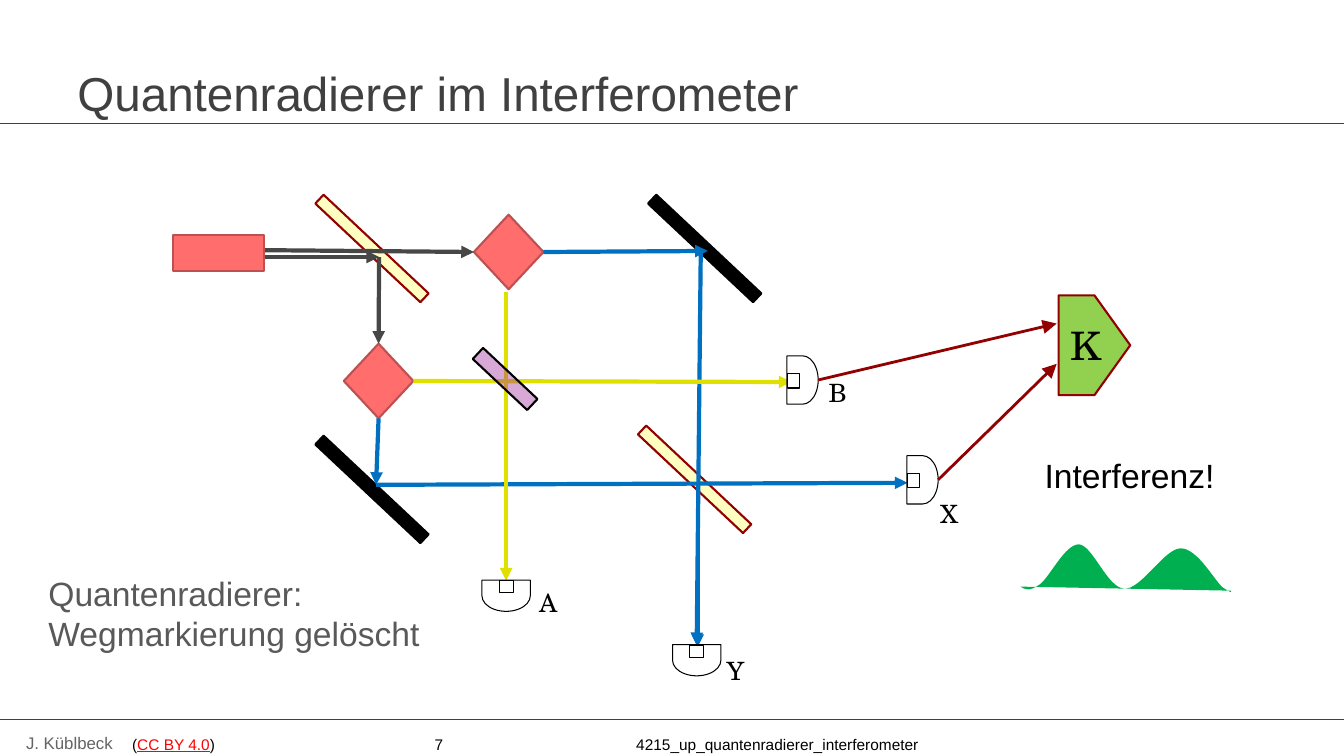
from lxml import etree
from pptx import Presentation
from pptx import util as u
from pptx.dml.color import RGBColor
from pptx.enum import shapes, text
from pptx.oxml.ns import qn

PX = 9144  # 100 px to the inch
KIND = shapes.MSO_SHAPE
MID = text.MSO_ANCHOR.MIDDLE
SANS, SERIF = "Arial", "TeX Gyre Schola"
ROSE, BRICK, CREAM, WINE = "FF6D6D", "BD5151", "FFFFC1", "920000"
BLACK, WHITE, GRAY, BLUE, YELLOW = "000000", "FFFFFF", "474747", "0070C0", "E0E000"
TOP, LEFT, BOTTOM, RIGHT = range(4)
TILT = 313.2


def px(*nums):
    return [u.Emu(round(n * PX)) for n in nums]


def rgb(code):
    return RGBColor.from_string(code)


def style(font, size, color, name=SANS):
    font.size, font.name = u.Pt(size), name
    font.color.rgb = rgb(color)


def write(slide, box, words, size, color=BLACK, name=SANS, pad=(10, 5),
          anchor=None, wrap=True):
    """Place a text box holding one paragraph; pad is its side and top margin."""
    frame = slide.shapes.add_textbox(*px(*box)).text_frame
    side, top = px(*pad)
    frame.margin_left = frame.margin_right = side
    frame.margin_top = frame.margin_bottom = top
    frame.word_wrap = wrap
    frame.vertical_anchor = anchor
    par = frame.paragraphs[0]
    par.text = words
    style(par.font, size, color, name)
    return par


def shape(slide, kind, box, fill, edge, width=1.5, turn=0):
    item = slide.shapes.add_shape(kind, *px(*box))
    item.shadow.inherit = False
    item.fill.solid()
    item.fill.fore_color.rgb = rgb(fill)
    item.line.color.rgb = rgb(edge)
    item.line.width = u.Pt(width)
    item.rotation = turn
    return item


def line(slide, start, end, color, width, head="med"):
    """Draw a straight line; an end is a point or a (shape, side) pair."""
    ends = [(0, 0) if hasattr(e[0], "shape_id") else e for e in (start, end)]
    item = slide.shapes.add_connector(
        shapes.MSO_CONNECTOR.STRAIGHT, *px(*ends[0], *ends[1]))
    if ends[0] is not start:
        item.begin_connect(*start)
    if ends[1] is not end:
        item.end_connect(*end)
    item.line.color.rgb = rgb(color)
    item.line.width = u.Pt(width)
    if head:
        etree.SubElement(item.line._get_or_add_ln(), qn("a:tailEnd"),
                         type="triangle", w=head, len=head)
    etree.SubElement(item._element.spPr, qn("a:effectLst"))


def plate(slide, x, y, fill, edge, wide=12, high=143):
    """Draw a tilted plate centred on (x, y)."""
    return shape(slide, KIND.RECTANGLE, (x - wide / 2, y - high / 2, wide, high),
                 fill, edge, turn=TILT)


def sensor(slide, x, y, label, spot, down=False):
    """Draw a detector centred on (x, y), with its label at spot."""
    turn = 90 if down else 0
    body = shape(slide, KIND.FLOWCHART_DELAY, (x - 15.5, y - 24, 31, 48),
                 WHITE, BLACK, 0.75, turn)
    dx, dy = (0, -9) if down else (-9, 1)
    shape(slide, KIND.RECTANGLE, (x + dx - 6, y + dy - 7, 12, 14),
          WHITE, BLACK, 0.75, turn)
    write(slide, (*spot, 37, 40), label, 18, name=SERIF, wrap=False)
    return body


def wave(slide, x, y):
    """Draw the pattern as smooth curves, three points to each."""
    knots = [(0, 42), (5, 45), (9, 47), (19, 40), (29, 33), (44, 0), (58, 0),
             (72, 1), (86, 43), (103, 44), (120, 45), (143, 4), (159, 4),
             (176, 4), (193, 37), (201, 43), (209, 48), (209, 48), (209, 46)]
    dots = [px(x + dx, y + dy) for dx, dy in knots]
    pen = slide.shapes.build_freeform(*dots[0], scale=1.0)
    pen.add_line_segments(dots[1:], close=True)
    item = pen.convert_to_shape()
    item.shadow.inherit = False
    item.fill.solid()
    item.fill.fore_color.rgb = rgb("00B050")
    item.line.fill.background()
    legs = list(item._element.iter(qn("a:lnTo")))
    for first, *rest in zip(legs[::3], legs[1::3], legs[2::3]):
        first.tag = qn("a:cubicBezTo")
        for leg in rest:
            first.append(leg[0])
            leg.getparent().remove(leg)


def frame(slide, wide):
    """Draw the title, the two rules and the footer."""
    write(slide, (67, 60, 1200, 63), "Quantenradierer im Interferometer", 34,
          "404040", anchor=MID)
    for y in (123, 714):
        line(slide, (0, y), (wide, y), "404040", 0.75, head=None)
    write(slide, (16, 722, 155, 30), "J. Küblbeck", 12, "646464")
    note = write(slide, (131, 729, 1202, 19), "(", 11, pad=(0, 0))
    link = note.add_run()
    link.text = "CC BY 4.0"
    link.font.color.rgb = rgb("FF0000")
    link.font.underline = True
    note.add_run().text = ")\t\t\t\t\t7\t\t\t\t4215_up_quantenradierer_interferometer"


def setup(slide):
    """Draw the interferometer with its beams and detectors."""
    for x, y, fill, edge in ((369, 246.5, CREAM, WINE), (699, 246.5, BLACK, BLACK),
                             (689, 475.5, CREAM, WINE), (369, 485.5, BLACK, BLACK)):
        plate(slide, x, y, fill, edge)
    upper, lower = (shape(slide, KIND.DIAMOND, (x, y, 69, 74), ROSE, BRICK)
                    for x, y in ((470, 213), (341, 341)))
    beams = [
        (GRAY, (241, 248), (upper, LEFT)),
        (BLUE, (373, 481), (900, 479)),
        (BLUE, (695, 251), (691, 640)),
        (GRAY, (376, 255), (lower, TOP)),
        (GRAY, (261, 255), (376, 255)),
        (BLUE, (692, 481), (692, 642)),
        (BLUE, (upper, RIGHT), (702, 249)),
        (BLUE, (lower, BOTTOM), (373, 481)),
        (YELLOW, (502, 290), (502, 576)),
        (YELLOW, (lower, RIGHT), (785, 379)),
    ]
    for color, start, end in beams:
        line(slide, start, end, color, 3)
    shape(slide, KIND.RECTANGLE, (172, 233, 90, 36), ROSE, BRICK)
    sensor(slide, 502, 591, "A", (525, 578), down=True)
    sensor(slide, 691, 655, "Y", (711, 645), down=True)
    exits = [(sensor(slide, 915, 476, "X", (923, 489)), 361),
             (sensor(slide, 796, 377, "B", (812, 369)), 321)]
    eraser = plate(slide, 501, 376, "A12F9C", BLACK, 15, 74)
    tint = eraser._element.spPr.find(qn("a:solidFill"))[0]
    etree.SubElement(tint, qn("a:alpha"), val="41000")
    for body, y in exits:
        line(slide, (body, RIGHT), (1048, y), WINE, 2, head="lg")


def result(slide, x, y):
    """Draw the coincidence unit and the interference pattern."""
    unit = shape(slide, KIND.PENTAGON, (x, y, 71, 99), "92D050", WINE)
    unit.text_frame.vertical_anchor = MID
    par = unit.text_frame.paragraphs[0]
    par.text, par.alignment = "K", text.PP_ALIGN.CENTER
    style(par.font, 28, BLACK, SERIF)
    write(slide, (x - 36, y + 153, 283, 66), "Interferenz!", 24, pad=(22, 5))
    wave(slide, x - 38, y + 247)


def main():
    deck = Presentation()
    deck.slide_width, deck.slide_height = px(1333, 750)
    slide = deck.slides.add_slide(deck.slide_layouts[6])
    frame(slide, 1333)
    setup(slide)
    result(slide, 1050, 293)
    write(slide, (26, 563, 995, 146), "Quantenradierer:\vWegmarkierung gelöscht",
          24, "595959", pad=(22, 5))
    deck.save("out.pptx")


if __name__ == "__main__":
    main()
